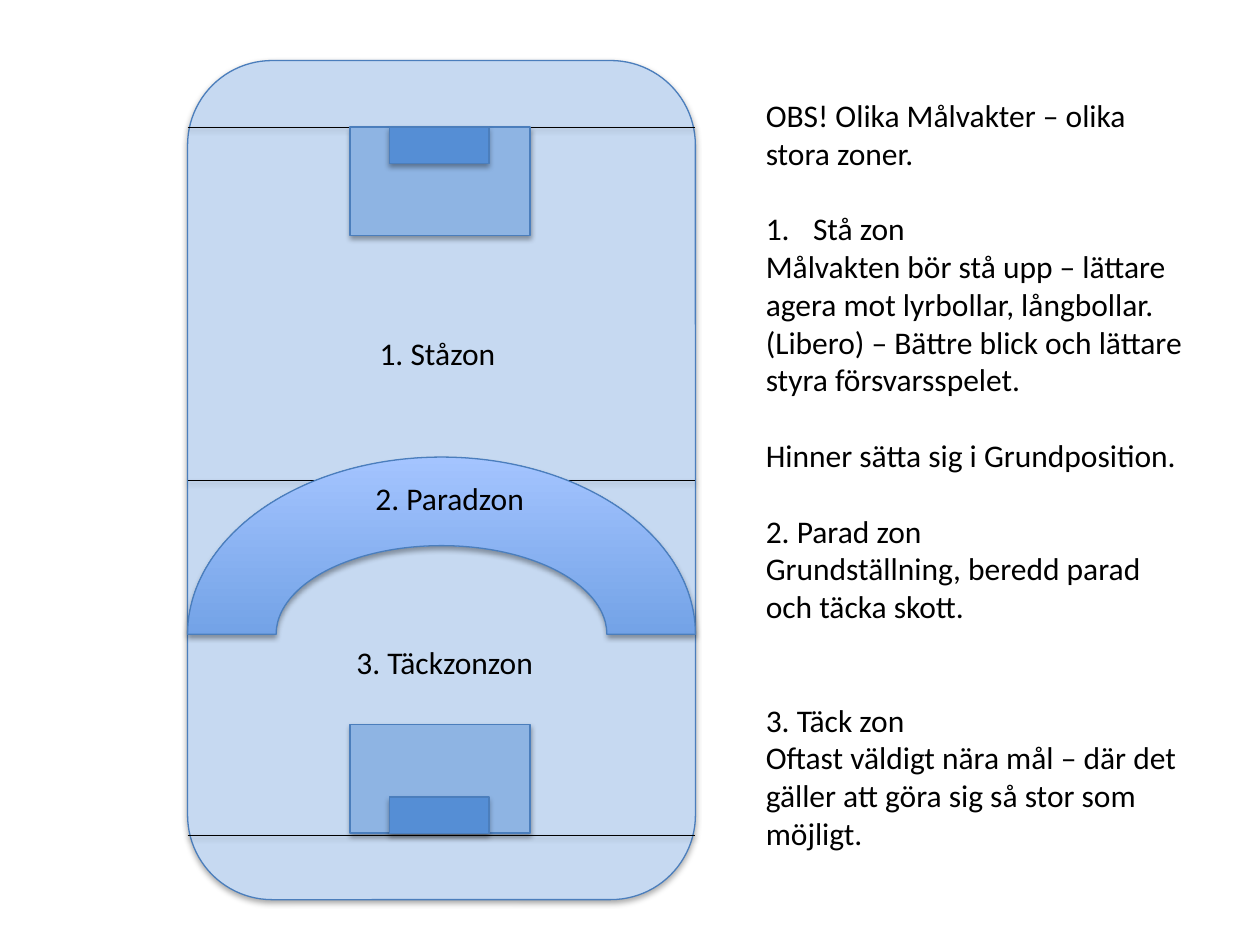
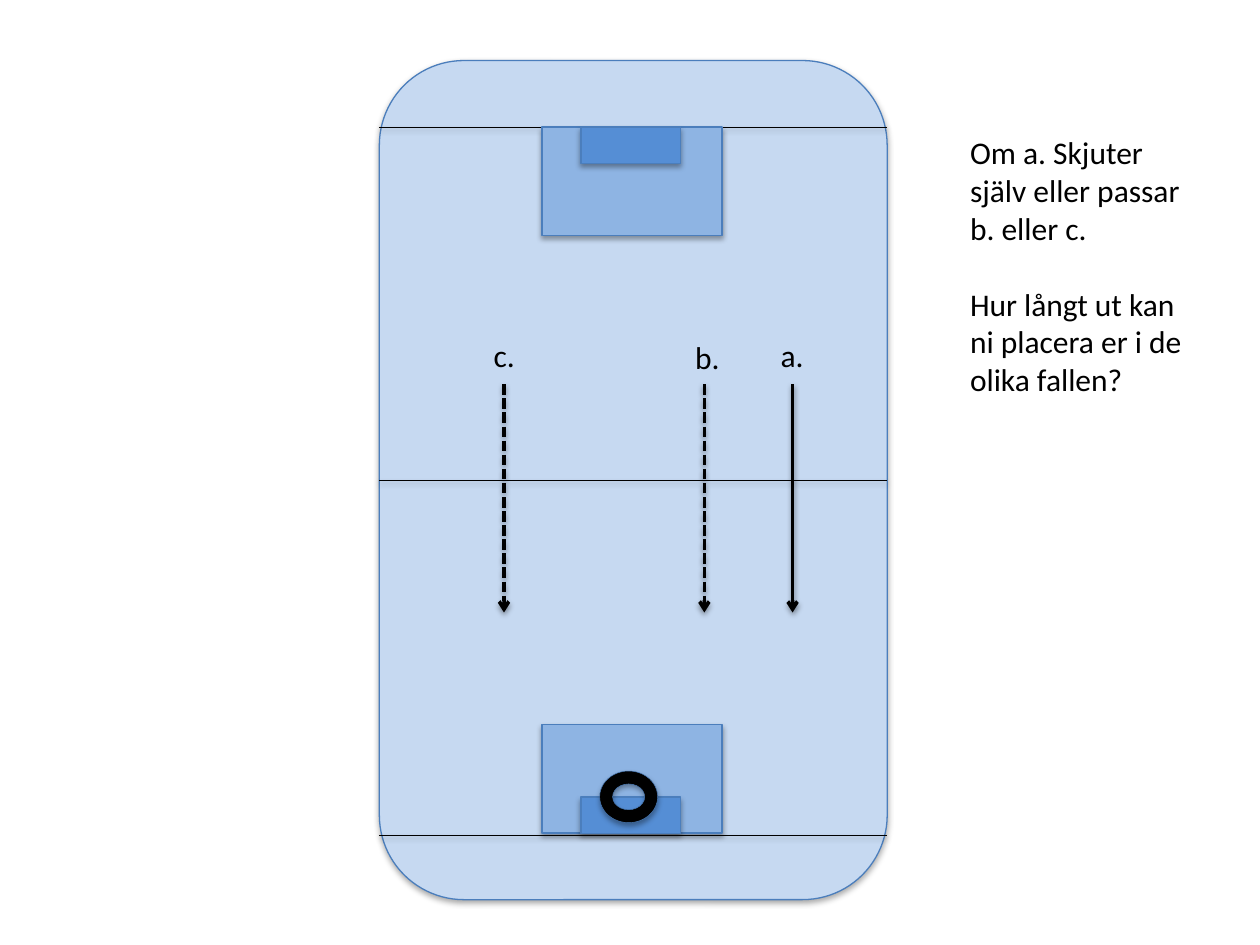
from pptx import Presentation
from pptx.dml.color import RGBColor
from pptx.enum.dml import MSO_LINE
from pptx.enum.shapes import MSO_CONNECTOR, MSO_SHAPE
from pptx.enum.text import MSO_AUTO_SIZE, PP_ALIGN
from pptx.oxml import parse_xml
from pptx.oxml.ns import nsdecls
from pptx.util import Pt

STRAIGHT = MSO_CONNECTOR.STRAIGHT
RECT = MSO_SHAPE.RECTANGLE
ROUNDED = MSO_SHAPE.ROUNDED_RECTANGLE
ARC = MSO_SHAPE.BLOCK_ARC
DONUT = MSO_SHAPE.DONUT
DASH = MSO_LINE.SQUARE_DOT
CENTER = PP_ALIGN.CENTER
LEFT = PP_ALIGN.LEFT
GROW = MSO_AUTO_SIZE.SHAPE_TO_FIT_TEXT

COLORS = {
    "ink": "000000",
    "rink": "C6D9F1",
    "crease": "8EB4E3",
    "goal": "558ED5",
    "edge": "4B7EBC",
    "arc_low": "3F80CE",
    "arc_high": "A4C4FF",
}
FONT = "Calibri"
SIZE = 18
LINE_GAP = 21.6
RINK_TOP, RINK_W, RINK_H = 34.6, 290.2, 479.5
GOAL_LINE_TOP, CENTER_LINE, GOAL_LINE_LOW = 72.6, 274.3, 477.3


def color(name):
    return RGBColor.from_string(COLORS[name])


def add_shadow(s, alpha, distance):
    s.element.spPr.append(parse_xml(
        f'<a:effectLst {nsdecls("a")}>'
        f'<a:outerShdw blurRad="{Pt(3.1)}" dist="{Pt(distance)}" dir="5400000" rotWithShape="0">'
        f'<a:srgbClr val="{COLORS["ink"]}"><a:alpha val="{alpha * 1000}"/></a:srgbClr>'
        '</a:outerShdw></a:effectLst>'))


def add_block(shapes, kind, x, y, w, h, fill, line_width=0.75):
    s = shapes.add_shape(kind, Pt(x), Pt(y), Pt(w), Pt(h))
    if isinstance(fill, tuple):
        s.fill.gradient()
        s.fill.gradient_angle = 90
        for stop, name in zip(s.fill.gradient_stops, fill):
            stop.color.rgb = color(name)
    else:
        s.fill.solid()
        s.fill.fore_color.rgb = color(fill)
    s.line.color.rgb = color("edge")
    s.line.width = Pt(line_width)
    add_shadow(s, 35, 1.8)


def add_line(shapes, x1, y1, x2, y2, width=0.25, dash=None, arrow=False):
    s = shapes.add_connector(STRAIGHT, Pt(x1), Pt(y1), Pt(x2), Pt(y2))
    s.line.color.rgb = color("ink")
    s.line.width = Pt(width)
    if dash:
        s.line.dash_style = dash
    if arrow:
        s.line._get_or_add_ln().append(
            parse_xml(f'<a:tailEnd {nsdecls("a")} type="arrow"/>'))
    add_shadow(s, 38, 1.6)


def number_paragraph(p):
    pPr = p._p.get_or_add_pPr()
    pPr.set("marL", str(Pt(27)))
    pPr.set("indent", str(Pt(-27)))
    pPr.append(parse_xml(f'<a:buFont {nsdecls("a")} typeface="+mj-lt"/>'))
    pPr.append(parse_xml(f'<a:buAutoNum {nsdecls("a")} type="arabicPeriod"/>'))


def add_text(sp, x, y, w, h, paragraphs, align=LEFT):
    tf = sp.shapes.add_textbox(Pt(x), Pt(y), Pt(w), Pt(h)).text_frame
    tf.word_wrap = True
    tf.auto_size = GROW
    for i, (text, gap_lines, numbered) in enumerate(paragraphs):
        p = tf.paragraphs[0] if i == 0 else tf.add_paragraph()
        p.alignment = align
        p.space_before = Pt(gap_lines * LINE_GAP)
        if numbered:
            number_paragraph(p)
        r = p.add_run()
        r.text = text
        r.font.name = FONT
        r.font.size = Pt(SIZE)
        r.font.color.rgb = color("ink")


def add_label(sp, x, y, w, text):
    add_text(sp, x, y, w, 29, [(text, 0, False)], CENTER)


def add_rink(sp, x):
    shapes = sp.shapes.add_group_shape().shapes
    add_block(shapes, ROUNDED, x, RINK_TOP, RINK_W, RINK_H, "rink")
    for y in (CENTER_LINE, GOAL_LINE_TOP, GOAL_LINE_LOW):
        add_line(shapes, x, y, x + RINK_W, y)
    for dx, w, h, low_y, fill in ((92.9, 102.9, 62.2, 413.9, "crease"),
                                  (115.2, 57, 20.8, 455.5, "goal")):
        for y in (low_y, GOAL_LINE_TOP):
            add_block(shapes, RECT, x + dx, y, w, h, fill)


def build_zones(sp):
    x = 107.2
    add_rink(sp, x)
    add_label(sp, 193, 187.2, 113.8, "1. Ståzon")
    add_block(sp.shapes, ARC, x, 261.2, RINK_W, 202.4, ("arc_low", "arc_high"))
    add_label(sp, 191.5, 363.6, 125.3, "3. Täckzonzon")
    add_label(sp, 200, 270, 113.8, "2. Paradzon")
    add_text(sp, 430.5, 51.2, 252.7, 443.5, [
        ("OBS! Olika Målvakter – olika stora zoner.", 0, False),
        ("Stå zon", 1, True),
        ("Målvakten bör stå upp – lättare agera mot lyrbollar, långbollar. "
         "(Libero) – Bättre blick och lättare styra försvarsspelet.", 0, False),
        ("Hinner sätta sig i Grundposition.", 1, False),
        ("2. Parad zon", 1, False),
        ("Grundställning, beredd parad och täcka skott.", 0, False),
        ("3. Täck zon", 2, False),
        ("Oftast väldigt nära mål – där det gäller att göra sig så stor som möjligt.", 0, False),
    ])


def build_shots(sp):
    add_rink(sp, 216.8)
    for x, dash in ((452.9, None), (402.5, DASH), (288, DASH)):
        add_line(sp.shapes, x, 219.6, x, 350, 2, dash, True)
    for text, x, y in (("c.", 258.3, 188.6), ("b.", 374.4, 189.8), ("a.", 422.7, 188.4)):
        add_label(sp, x, y, 59.8, text)
    add_block(sp.shapes, DONUT, 342.7, 440.6, 33.1, 29.5, "ink", 0.25)
    add_text(sp, 547.2, 72.7, 143.3, 159.8, [
        ("Om a. Skjuter själv eller passar b. eller c.", 0, False),
        ("Hur långt ut kan ni placera er i de olika fallen?", 1, False),
    ])


def main():
    prs = Presentation()
    prs.slide_width, prs.slide_height = Pt(720), Pt(540)
    for build in (build_zones, build_shots):
        build(prs.slides.add_slide(prs.slide_layouts[6]))
    prs.save("out.pptx")


if __name__ == "__main__":
    main()
